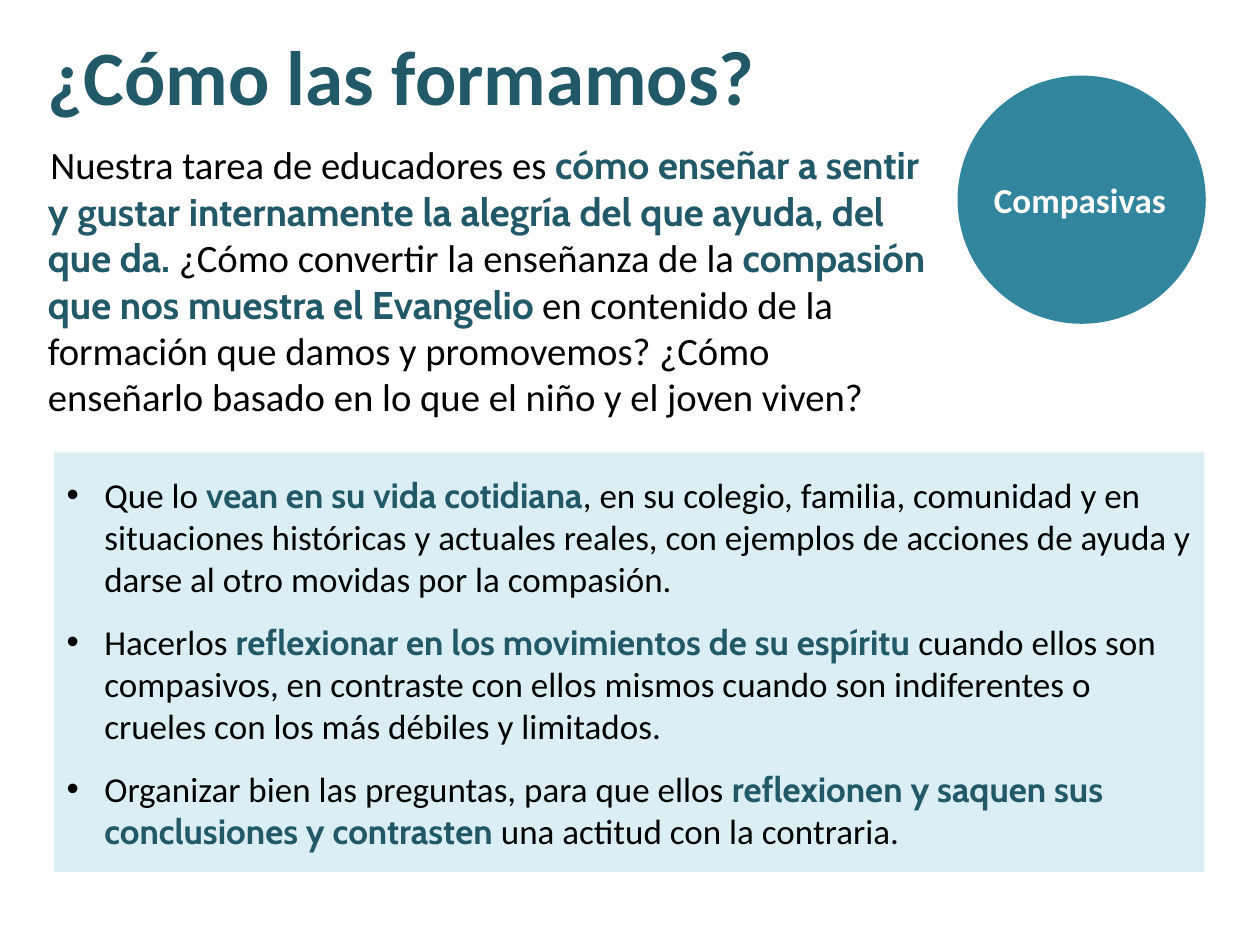
from pptx import Presentation
from pptx.dml.color import RGBColor
from pptx.enum.shapes import MSO_SHAPE as Shape
from pptx.enum.text import MSO_ANCHOR as Anchor, MSO_AUTO_SIZE as AutoSize, PP_ALIGN as Align
from pptx.oxml.ns import qn
from pptx.util import Pt
from lxml.etree import SubElement

TEAL, DARK_TEAL, PALE_BLUE = "31859C", "215968", "DBEEF4"


def style(font, size, color, name="Calibri", bold=False):
    font.size, font.name, font.bold = Pt(size), name, bold
    font.color.rgb = RGBColor.from_string(color)


def write_paragraph(para, parts, size, margin, indent, bullet=None):
    """Write parts that alternate between plain and highlighted text."""
    para.alignment = Align.LEFT
    para.space_before = Pt(6)
    for i, part in enumerate(parts):
        span = para.add_run()
        span.text = part
        if i % 2:
            style(span.font, size, DARK_TEAL, "Cabin", True)
        else:
            style(span.font, size, "000000")
    props = para._p.get_or_add_pPr()
    props.set("marL", str(Pt(margin)))
    props.set("indent", str(Pt(indent)))
    if bullet:
        SubElement(props, qn("a:buFont")).set("typeface", "Arial")
        SubElement(props, qn("a:buChar")).set("char", bullet)
    else:
        SubElement(props, qn("a:buNone"))


deck = Presentation()
deck.slide_width, deck.slide_height = Pt(720), Pt(540)
page = deck.slides.add_slide(deck.slide_layouts[1])

# Title
title = page.shapes.title
title.left, title.top, title.width, title.height = Pt(20.16), Pt(-2.16), Pt(436.32), Pt(90)
title.text_frame.text = "¿Cómo las formamos?"
title.text_frame.auto_size = AutoSize.NONE
title.text_frame.vertical_anchor = Anchor.MIDDLE
title.text_frame.paragraphs[0].alignment = Align.LEFT
style(title.text_frame.paragraphs[0].font, 44, DARK_TEAL, bold=True)

# Introduction
intro = page.placeholders[1]
intro.left, intro.top, intro.width, intro.height = Pt(20.16), Pt(77.04), Pt(516.24), Pt(169.92)
intro.text_frame.auto_size = AutoSize.NONE
intro_parts = [
    "Nuestra tarea de educadores es ",
    "cómo enseñar a sentir y gustar internamente la alegría del que ayuda, del que da. ",
    "¿Cómo convertir la enseñanza de la ",
    "compasión que nos muestra el Evangelio ",
    "en contenido de la formación que damos y promovemos? ¿Cómo enseñarlo basado "
    "en lo que el niño y el joven viven?",
]
write_paragraph(intro.text_frame.paragraphs[0], intro_parts, 22.1, 0, 1.44)

# Circle with its label
circle = page.shapes.add_shape(Shape.OVAL, Pt(547.2), Pt(43.2), Pt(141.84), Pt(141.84))
label = page.shapes.add_textbox(Pt(560.88), Pt(98.64), Pt(113.76), Pt(31.68))
label.text_frame.word_wrap = False
label.text_frame.auto_size = AutoSize.SHAPE_TO_FIT_TEXT
label.text_frame.text = "Compasivas"
style(label.text_frame.paragraphs[0].font, 20, "FFFFFF", bold=True)

# Panel with the proposals
panel = page.shapes.add_shape(Shape.RECTANGLE, Pt(30.96), Pt(258.48), Pt(657.36), Pt(239.76))
for shape, color in [(circle, TEAL), (panel, PALE_BLUE)]:
    shape.shadow.inherit = False
    shape.fill.solid()
    shape.fill.fore_color.rgb = RGBColor.from_string(color)
    shape.line.fill.background()

proposals = [
    ["Que lo ", "vean en su vida cotidiana",
     ", en su colegio, familia, comunidad y en situaciones históricas y actuales reales, "
     "con ejemplos de acciones de ayuda y darse al otro movidas por la compasión."],
    ["Hacerlos ", "reflexionar en los movimientos de su espíritu ",
     "cuando ellos son compasivos, en contraste con ellos mismos cuando son indiferentes "
     "o crueles con los más débiles y limitados."],
    ["Organizar bien las preguntas, para que ellos ",
     "reflexionen y saquen sus conclusiones y contrasten ",
     "una actitud con la contraria."],
]
frame = panel.text_frame
frame.word_wrap = True
frame.vertical_anchor = Anchor.MIDDLE
for i, parts in enumerate(proposals):
    para = frame.add_paragraph() if i else frame.paragraphs[0]
    para.space_after = Pt(6)
    write_paragraph(para, parts, 20, 21.6, -21.6, "•")

deck.save("out.pptx")
